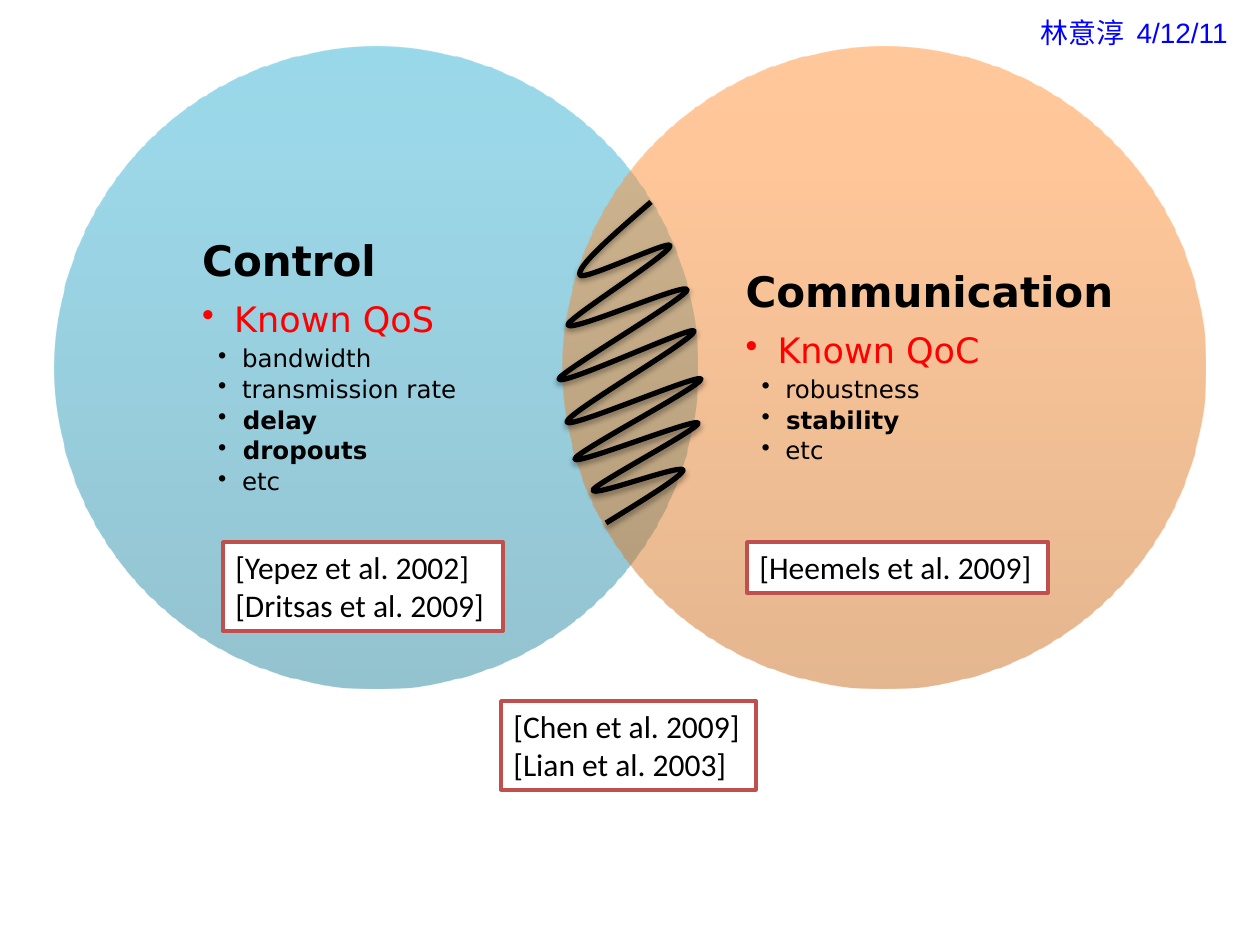
from typing import NamedTuple

import pptx
import pptx.dml.color
import pptx.enum.shapes
import pptx.enum.text
import pptx.oxml
import pptx.oxml.ns
import pptx.util
from lxml import etree

RGB = pptx.dml.color.RGBColor
SHAPE = pptx.enum.shapes.MSO_SHAPE
ANCHOR = pptx.enum.text.MSO_ANCHOR
FIT = pptx.enum.text.MSO_AUTO_SIZE
LEFT = pptx.enum.text.PP_ALIGN.LEFT
Pt = pptx.util.Pt
qn = pptx.oxml.ns.qn

SCALE = 914400 / 126  # EMU in one px
BLACK = RGB(0x00, 0x00, 0x00)
WHITE = RGB(0xFF, 0xFF, 0xFF)
RED = RGB(0xFF, 0x00, 0x00)
BLUE = RGB(0x00, 0x00, 0xFF)
BRICK = RGB(0xC0, 0x50, 0x4D)
TEALS = RGB(0x2A, 0x88, 0xA2), RGB(0x37, 0xB1, 0xD2), RGB(0x34, 0xB4, 0xD6)
PEACHES = RGB(0xCC, 0x6E, 0x20), RGB(0xFF, 0x90, 0x34), RGB(0xFF, 0x91, 0x36)
STOPS = 0, 80, 100


class Box(NamedTuple):
    x: int
    y: int
    w: int
    h: int


class Style(NamedTuple):
    size: int
    color: RGB
    after: float
    margin: int = 0
    indent: int = 0


class Field(NamedTuple):
    left: int
    text: int
    tints: tuple
    title: str
    known: str
    items: list
    bold: set


class Ref(NamedTuple):
    box: Box
    lines: list


LEVELS = [Style(24, BLACK, 9.8),
          Style(20, RED, 3.5, 32, -32),
          Style(14, BLACK, 2.45, 32, -16)]

FIELDS = [
    Field(55, 145, TEALS, "Control", "Known QoS",
          ["bandwidth", "transmission rate", "delay", "dropouts", "etc"],
          {"delay", "dropouts"}),
    Field(563, 745, PEACHES, "Communication", "Known QoC",
          ["robustness", "stability", "etc"], {"stability"}),
]

REFS = [
    Ref(Box(223, 542, 280, 89), ["[Yepez et al. 2002]", "[Dritsas et al. 2009]"]),
    Ref(Box(501, 701, 255, 89), ["[Chen et al. 2009]", "[Lian et al. 2003]"]),
    Ref(Box(747, 542, 301, 51), ["[Heemels et al. 2009]"]),
]

# Start point, then two handles and an end point for each curve
START = 651, 202
CURVES = [
    (614, 234), (576, 267), (580, 275), (582, 282), (673, 238), (670, 246),
    (669, 255), (566, 319), (568, 325), (571, 333), (688, 281), (687, 290),
    (685, 299), (558, 373), (559, 379), (561, 387), (693, 325), (694, 331),
    (696, 339), (566, 413), (567, 422), (568, 430), (699, 373), (701, 379),
    (702, 386), (575, 452), (575, 459), (575, 466), (694, 418), (698, 423),
    (701, 428), (596, 483), (593, 490), (591, 498), (680, 464), (683, 470),
    (684, 475), (645, 499), (606, 523),
]


def px(n: int) -> int:
    return round(n * SCALE)


def place(box: Box) -> list[int]:
    return [px(n) for n in box]


def add(parent, tag: str, **attrs):
    return etree.SubElement(parent, qn(tag), attrs)


def draw_disc(slide, field: Field) -> None:
    disc = slide.shapes.add_shape(SHAPE.OVAL, *place(Box(field.left, 47, 642, 642)))
    disc.shadow.inherit = False
    disc.line.fill.background()
    disc.fill.gradient()
    disc.fill.gradient_angle = 90
    stops = disc._element.spPr.find(".//" + qn("a:gsLst"))
    for old in list(stops):
        stops.remove(old)
    for pos, tint in zip(STOPS, field.tints):
        stop = add(stops, "a:gs", pos=str(pos * 1000))
        color = add(stop, "a:srgbClr", val=str(tint))
        add(color, "a:alpha", val="50000")


def draw_list(slide, field: Field) -> None:
    frame = slide.shapes.add_textbox(*place(Box(field.text, 123, 369, 490))).text_frame
    frame.word_wrap = True
    frame.vertical_anchor = ANCHOR.MIDDLE
    frame.margin_left = frame.margin_right = frame.margin_top = frame.margin_bottom = 0
    frame._txBody.bodyPr.set("anchorCtr", "1")
    rows = [(0, field.title, True), (1, field.known, False)]
    rows += [(2, " " + item, item in field.bold) for item in field.items]
    for n, (level, text, bold) in enumerate(rows):
        para = frame.add_paragraph() if n else frame.paragraphs[0]
        style = LEVELS[level]
        para.text = text
        para.level = level
        para.line_spacing = 0.9
        para.space_after = Pt(style.after)
        para.font.name = "DejaVu Sans"
        para.font.size = Pt(style.size)
        para.font.bold = bold
        para.font.color.rgb = style.color
        if level:
            props = para._p.get_or_add_pPr()
            props.set("marL", str(px(style.margin)))
            props.set("indent", str(px(style.indent)))
            bullet = etree.Element(qn("a:buChar"), char="•")
            props.find(qn("a:defRPr")).addprevious(bullet)


def draw_coil(slide) -> None:
    maker = slide.shapes.build_freeform(*START, scale=SCALE)
    maker.add_line_segments(CURVES, close=False)
    coil = maker.convert_to_shape()
    coil.fill.background()
    coil.line.color.rgb = BLACK
    coil.line.width = Pt(3)
    coil.shadow.inherit = False
    props = coil._element.spPr
    # Join each three points into one curve
    track = props.find(".//" + qn("a:path"))
    legs = track.findall(qn("a:lnTo"))
    for n in range(0, len(legs), 3):
        curve = add(track, "a:cubicBezTo")
        for leg in legs[n:n + 3]:
            curve.append(leg[0])
            track.remove(leg)
    # Soft shadow below the line
    shade = add(props.find(qn("a:effectLst")), "a:outerShdw", blurRad="40000",
                dist="23000", dir="5400000", rotWithShape="0")
    add(add(shade, "a:srgbClr", val=str(BLACK)), "a:alpha", val="35000")


def write(frame, lines: list[str], font: str, size: int, color: RGB) -> None:
    frame.word_wrap = False
    frame.auto_size = FIT.SHAPE_TO_FIT_TEXT
    frame.vertical_anchor = ANCHOR.TOP
    for n, line in enumerate(lines):
        para = frame.add_paragraph() if n else frame.paragraphs[0]
        para.text = line
        para.alignment = LEFT
        para.font.name = font
        para.font.size = Pt(size)
        para.font.color.rgb = color


def draw_ref(slide, ref: Ref) -> None:
    card = slide.shapes.add_shape(SHAPE.RECTANGLE, *place(ref.box))
    card.shadow.inherit = False
    card.fill.solid()
    card.fill.fore_color.rgb = WHITE
    card.line.color.rgb = BRICK
    card.line.width = Pt(2)
    write(card.text_frame, ref.lines, "Calibri", 18, BLACK)


def main() -> None:
    deck = pptx.Presentation()
    deck.slide_width, deck.slide_height = px(1260), px(945)
    slide = deck.slides.add_slide(deck.slide_layouts[6])
    # Two fields that overlap
    for field in FIELDS:
        draw_disc(slide, field)
        draw_list(slide, field)
    # Hatching on the overlap
    draw_coil(slide)
    # Papers
    for ref in REFS:
        draw_ref(slide, ref)
    # Author and date
    note = slide.shapes.add_textbox(*place(Box(1028, 9, 227, 47)))
    write(note.text_frame, ["林意淳  4/12/11"], "Arial", 16, BLUE)
    deck.save("out.pptx")


if __name__ == "__main__":
    main()
